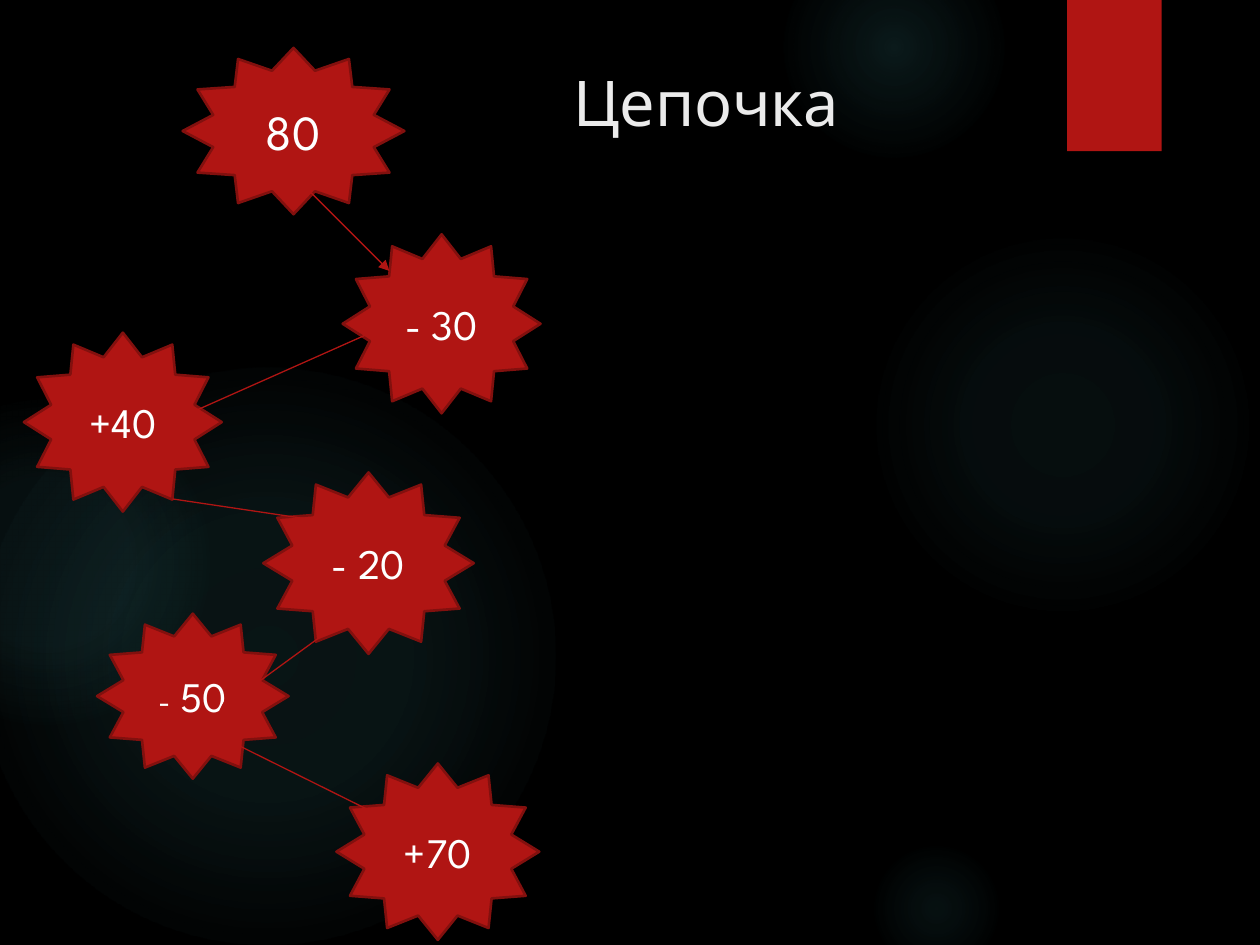
from lxml import etree
from pptx import Presentation
from pptx.dml.color import RGBColor
from pptx.enum.shapes import MSO_CONNECTOR, MSO_SHAPE
from pptx.enum.text import MSO_ANCHOR, PP_ALIGN
from pptx.oxml import parse_xml
from pptx.oxml.ns import nsdecls, qn
from pptx.util import Inches, Pt

BLACK = RGBColor(0x00, 0x00, 0x00)
RED = RGBColor(0xB0, 0x15, 0x13)
DARK_RED = RGBColor(0x82, 0x10, 0x0E)
WHITE = RGBColor(0xFF, 0xFF, 0xFF)
PALE = RGBColor(0xEB, 0xEB, 0xEB)
TEAL = RGBColor(0x50, 0xB9, 0xC1)
FONT = "League Spartan"


def add_shape(kind, x, y, w, h):
    sp = s.shapes.add_shape(kind, Inches(x), Inches(y), Inches(w), Inches(h))
    sp.shadow.inherit = False
    return sp


def add_run(p, text, size, color):
    r = p.add_run()
    r.text = text
    for name, value in {"name": FONT, "size": Pt(size)}.items():
        setattr(r.font, name, value)
    r.font.color.rgb = color


prs = Presentation()
prs.slide_width, prs.slide_height = Inches(10), Inches(7.5)
s = prs.slides.add_slide(prs.slide_layouts[6])
s.background.fill.solid()
s.background.fill.fore_color.rgb = BLACK

glows = [
    (6.89, 1.83, 3.08, [(0, 7), (36, 6), (69, 0)]),
    (6.22, -0.5, 1.75, [(0, 14), (36, 7), (73, 0)]),
    (6.89, 6.67, 1.08, [(0, 9), (36, 5), (66, 0)]),
    (-0.17, 2.92, 4.58, [(0, 11), (36, 10), (75, 0)]),
    (-0.92, 3.17, 2.58, [(0, 8), (36, 8), (72, 0)]),
]
for x, y, d, stops in glows:
    sp = add_shape(MSO_SHAPE.OVAL, x, y, d, d)
    sp.line.fill.background()
    gs = "".join(
        f'<a:gs pos="{pos * 1000}"><a:srgbClr val="{TEAL}">'
        f'<a:alpha val="{alpha * 1000}"/></a:srgbClr></a:gs>'
        for pos, alpha in stops
    )
    grad = parse_xml(
        f'<a:gradFill {nsdecls("a")}><a:gsLst>{gs}</a:gsLst><a:path path="circle">'
        '<a:fillToRect l="50000" t="50000" r="50000" b="50000"/></a:path></a:gradFill>'
    )
    sp._element.spPr.find(qn("a:prstGeom")).addnext(grad)

sp = add_shape(MSO_SHAPE.RECTANGLE, 8.47, 0, 0.75, 1.2)
sp.fill.solid()
sp.fill.fore_color.rgb = RED
sp.line.fill.background()

tf = s.shapes.add_textbox(Inches(4.45), Inches(0), Inches(3.23), Inches(1.15)).text_frame
for name, value in {"word_wrap": True, "vertical_anchor": MSO_ANCHOR.BOTTOM}.items():
    setattr(tf, name, value)
add_run(tf.paragraphs[0], "Цепочка", 36, PALE)

stars = [
    (1.45, 0.38, 1.76, 1.32, [("80", 28)]),
    (0.19, 2.64, 1.57, 1.42, [("+40", 24)]),
    (0.77, 4.87, 1.52, 1.31, [("-", 18), (" 50", 24)]),
    (2.67, 6.06, 1.61, 1.4, [("+70", 24)]),
    (2.09, 3.75, 1.67, 1.44, [("- 20", 24)]),
    (2.72, 1.86, 1.57, 1.42, [("- 30", 24)]),
]
for x, y, w, h, runs in stars:
    sp = add_shape(MSO_SHAPE.STAR_12_POINT, x, y, w, h)
    sp.fill.solid()
    sp.fill.fore_color.rgb = RED
    sp.line.color.rgb = DARK_RED
    sp.line.width = Pt(1.5)
    tf = sp.text_frame
    tf.vertical_anchor = MSO_ANCHOR.MIDDLE
    p = tf.paragraphs[0]
    p.alignment = PP_ALIGN.CENTER
    for text, size in runs:
        add_run(p, text, size, WHITE)

links = [
    (2.09, 1.15, 3.09, 2.15, True),
    (2.99, 2.62, 1.46, 3.3, True),
    (1.37, 3.96, 2.58, 4.14, True),
    (3.22, 4.56, 1.74, 5.64, True),
    (1.76, 5.85, 3.09, 6.51, False),
]
for x1, y1, x2, y2, arrow in links:
    cn = s.shapes.add_connector(
        MSO_CONNECTOR.STRAIGHT, Inches(x1), Inches(y1), Inches(x2), Inches(y2)
    )
    cn.line.color.rgb = RED
    cn.line.width = Pt(0.75)
    if arrow:
        etree.SubElement(cn.line._get_or_add_ln(), qn("a:tailEnd"), type="triangle")
    etree.SubElement(cn._element.spPr, qn("a:effectLst"))

prs.save("out.pptx")
